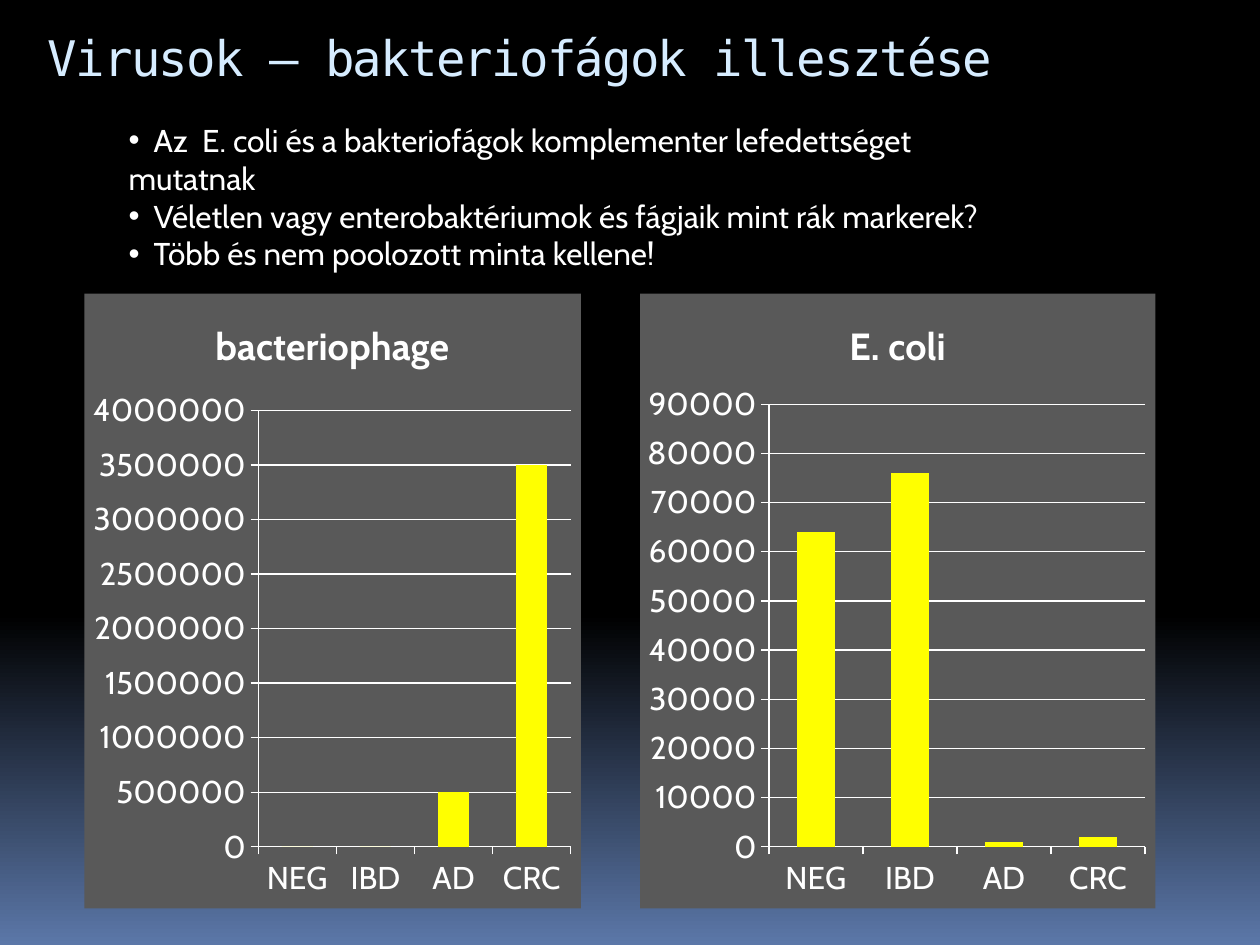
from copy import deepcopy

from pptx import Presentation
from pptx.chart.data import CategoryChartData
from pptx.dml.color import RGBColor
from pptx.enum.chart import XL_CHART_TYPE, XL_TICK_MARK
from pptx.enum.text import MSO_ANCHOR, MSO_AUTO_SIZE, PP_ALIGN
from pptx.oxml import parse_xml
from pptx.oxml.ns import nsdecls, qn
from pptx.util import Inches, Pt

COLORS = {
    "black": "000000",
    "horizon": "5B77A8",
    "title": "D6ECFF",
    "text": "FFFFFF",
    "panel": "595959",
    "bar": "FFFF00",
}
GROUPS = ["NEG", "IBD", "AD", "CRC"]


def rgb(name):
    return RGBColor.from_string(COLORS[name])


class SlideBuilder:
    title_font = "DejaVu Sans Mono"
    body_font = "Cabin"
    body_size = Pt(18)

    def __init__(self, slide):
        self.slide = slide

    def style(self, font, name, size, color):
        font.name, font.size = name, size
        font.color.rgb = rgb(color)

    def place(self, shape, left, top, width, height):
        shape.left, shape.top = Inches(left), Inches(top)
        shape.width, shape.height = Inches(width), Inches(height)
        frame = shape.text_frame
        frame.word_wrap = True
        frame.auto_size = MSO_AUTO_SIZE.NONE
        frame.vertical_anchor = MSO_ANCHOR.TOP
        return frame

    def background(self, stops):
        fill = self.slide.background.fill
        fill.gradient()
        fill.gradient_angle = 270
        # The default gradient has two stops, so add the middle one
        first = self.slide.background._cSld.find(".//" + qn("a:gs"))
        first.addnext(deepcopy(first))
        for stop, (position, color) in zip(fill.gradient_stops, stops):
            stop.position = position
            stop.color.rgb = rgb(color)

    def title(self, text, *box):
        frame = self.place(self.slide.shapes.title, *box)
        frame.text = text
        heading = frame.paragraphs[0]
        heading.alignment = PP_ALIGN.LEFT
        self.style(heading.font, self.title_font, Pt(28), "title")
        heading.runs[0]._r.get_or_add_rPr().set("spc", "-100")

    def bullets(self, points, *box):
        frame = self.place(self.slide.placeholders[1], *box)
        frame.text = "\n".join("\t" + point for point in points)
        for point in frame.paragraphs:
            properties = point._p.get_or_add_pPr()
            properties.set("marL", "0")
            properties.set("indent", "0")
            for xml in (
                f'<a:buChar {nsdecls("a")} char="•"/>',
                f'<a:tabLst {nsdecls("a")}><a:tab pos="{Inches(0.2)}" algn="l"/></a:tabLst>',
            ):
                properties.append(parse_xml(xml))
            point.space_before = Pt(0)
            self.style(point.font, self.body_font, self.body_size, "text")

    def column_chart(self, name, values, top_value, step, plot_box, *box):
        data = CategoryChartData()
        data.categories = GROUPS
        data.add_series(name, values)
        chart = self.slide.shapes.add_chart(
            XL_CHART_TYPE.COLUMN_CLUSTERED, *map(Inches, box), data
        ).chart
        self.style(chart.font, self.body_font, self.body_size, "text")
        chart.has_legend = False

        # Heading
        chart.has_title = True
        chart.chart_title.include_in_layout = False
        chart.chart_title.text_frame.text = name
        heading = chart.chart_title.text_frame.paragraphs[0]
        self.style(heading.font, self.body_font, Pt(21.6), "text")
        heading.font.bold = True

        # Axes and gridlines
        value_axis = chart.value_axis
        value_axis.minimum_scale, value_axis.maximum_scale = 0, top_value
        value_axis.major_unit = step
        value_axis.has_major_gridlines = True
        lines = [value_axis.major_gridlines.format.line]
        for axis in (chart.category_axis, value_axis):
            axis.major_tick_mark = XL_TICK_MARK.OUTSIDE
            lines.append(axis.format.line)
        for line in lines:
            line.color.rgb = rgb("text")
            line.width = Pt(0.75)

        # Columns
        plot = chart.plots[0]
        plot.vary_by_categories = False
        plot.gap_width = 150
        fill = plot.series[0].format.fill
        fill.solid()
        fill.fore_color.rgb = rgb("bar")

        # Plot area as fractions of the chart
        modes = "".join(f'<c:{side}Mode val="edge"/>' for side in "xy")
        extents = "".join(
            f'<c:{side} val="{value}"/>' for side, value in zip("xywh", plot_box)
        )
        layout = parse_xml(
            f'<c:layout {nsdecls("c")}><c:manualLayout><c:layoutTarget val="inner"/>'
            f"{modes}{extents}</c:manualLayout></c:layout>"
        )
        plot_area = chart._chartSpace.find(".//" + qn("c:plotArea"))
        for automatic in plot_area.findall(qn("c:layout")):
            plot_area.remove(automatic)
        plot_area.insert(0, layout)

        # Panel behind the chart
        panel = parse_xml(
            f'<c:spPr {nsdecls("c", "a")}><a:solidFill><a:srgbClr val="{COLORS["panel"]}"/>'
            "</a:solidFill><a:ln><a:noFill/></a:ln></c:spPr>"
        )
        chart._chartSpace.find(qn("c:chart")).addnext(panel)


def main():
    presentation = Presentation()
    presentation.slide_width, presentation.slide_height = Inches(10), Inches(7.5)
    layout = presentation.slide_layouts[1]
    builder = SlideBuilder(presentation.slides.add_slide(layout))

    # Background and text
    builder.background([(0, "black"), (0.65, "black"), (1, "horizon")])
    builder.title("Virusok – bakteriofágok illesztése", 0.28, 0.17, 9.45, 1)
    builder.bullets(
        [
            "Az  E. coli és a bakteriofágok komplementer lefedettséget mutatnak",
            "Véletlen vagy enterobaktériumok és fágjaik mint rák markerek?",
            "Több és nem poolozott minta kellene!",
        ],
        0.92, 0.91, 7.46, 1.3,
    )

    # Coverage charts
    top, height = 2.33, 4.88
    builder.column_chart(
        "bacteriophage", [0, 0, 500000, 3500000], 4000000, 500000,
        (0.35, 0.19, 0.63, 0.71), 0.67, top, 3.94, height,
    )
    builder.column_chart(
        "E. coli", [64000, 76000, 1000, 2000], 90000, 10000,
        (0.25, 0.18, 0.73, 0.72), 5.08, top, 4.09, height,
    )

    presentation.save("out.pptx")


if __name__ == "__main__":
    main()
